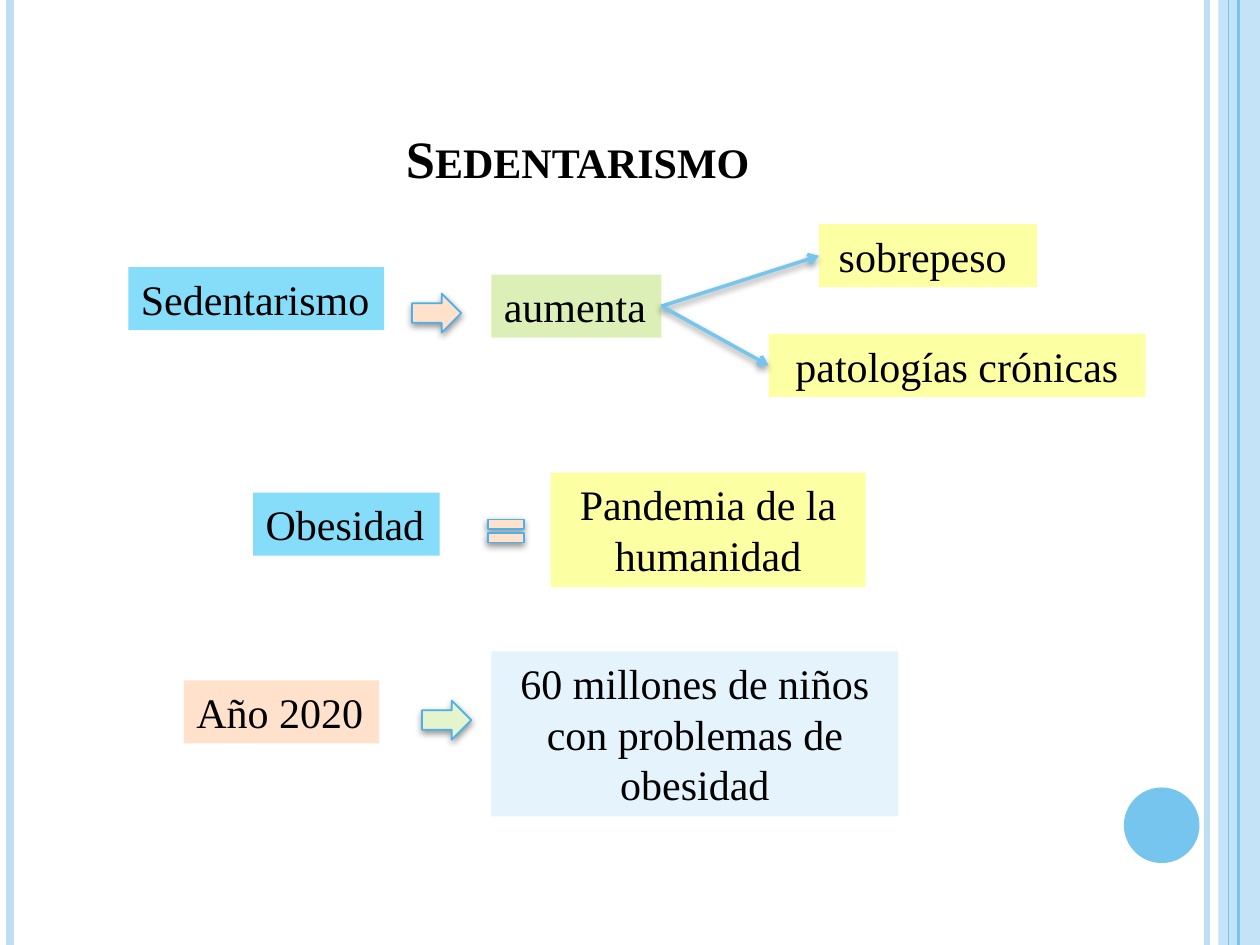
"""Build the Sedentarismo slide: three cause-and-effect rows in a blue frame."""
from lxml import etree
from pptx import Presentation
from pptx.dml.color import RGBColor
from pptx.enum.shapes import MSO_CONNECTOR, MSO_SHAPE as Shape
from pptx.enum.text import MSO_ANCHOR, MSO_AUTO_SIZE, PP_ALIGN as Align
from pptx.oxml.ns import qn
from pptx.util import Inches, Pt

THEME = {
    "font": "Times New Roman", "title_size": 30, "body_size": 24,
    "text": "000000", "pale": "BDDFF6", "blue": "76C5EF", "outline": "4BB1E7",
    "cyan": "86DDF9", "yellow": "FDFFA3", "green": "DBEFB6",
    "mint": "E4F4CD", "peach": "FFE1CC", "ice": "E4F3FC",
}
color = {name: RGBColor.from_string(value) for name, value in THEME.items()
         if name not in ("font", "title_size", "body_size")}


def set_effects(shape, alpha=None, distance=0):
    effects = etree.SubElement(shape._element.spPr, qn("a:effectLst"))
    if alpha:
        shadow = etree.SubElement(effects, qn("a:outerShdw"), blurRad=str(Pt(4)),
                                  dist=str(Pt(distance)), dir="5400000", rotWithShape="0")
        black = etree.SubElement(shadow, qn("a:srgbClr"), val=THEME["text"])
        etree.SubElement(black, qn("a:alpha"), val=str(alpha * 1000))


def add_line(start, end, line_color, width):
    line = slide.shapes.add_connector(MSO_CONNECTOR.STRAIGHT, *map(Inches, start + end))
    line.line.color.rgb = color[line_color]
    line.line.width = Pt(width)
    return line


presentation = Presentation()
presentation.slide_width, presentation.slide_height = Inches(10), Inches(7.5)
slide = presentation.slides.add_slide(presentation.slide_layouts[5])

for kind, bounds, fill, opacity in (
    (Shape.RECTANGLE, (9.67, 0, 0.33, 7.5), "pale", 87),
    (Shape.OVAL, (8.92, 6.25, 0.6, 0.6), "blue", 100),
):
    shape = slide.shapes.add_shape(kind, *map(Inches, bounds))
    shape.fill.solid()
    shape.fill.fore_color.rgb = color[fill]
    shape.line.fill.background()
    shape.shadow.inherit = False
    fill_color = shape._element.spPr.find(".//" + qn("a:srgbClr"))
    etree.SubElement(fill_color, qn("a:alpha"), val=str(opacity * 1000))

for x, line_color, width in (
    (9.58, "pale", 3), (0.08, "pale", 4.5), (9.83, "blue", 1.5), (9.75, "blue", 0.75),
):
    set_effects(add_line((x, 0), (x, 7.5), line_color, width))

title = slide.shapes.title
title.left, title.top, title.width, title.height = map(Inches, (0.5, 0.3, 8.17, 1.25))
title.text_frame.text = "Sedentarismo"
title.text_frame.auto_size = MSO_AUTO_SIZE.NONE
title.text_frame.vertical_anchor = MSO_ANCHOR.BOTTOM
paragraph = title.text_frame.paragraphs[0]
paragraph.alignment = Align.CENTER
run = paragraph.runs[0]
run._r.get_or_add_rPr().set("cap", "small")
title_format = {"name": THEME["font"], "size": Pt(THEME["title_size"]), "bold": True}
for name, value in title_format.items():
    setattr(run.font, name, value)
run.font.color.rgb = color["text"]

boxes = (
    ("Sedentarismo", (1.02, 2.12, 2.03, 0.5), "cyan", Align.LEFT, 0),
    ("sobrepeso ", (6.5, 1.78, 1.73, 0.5), "yellow", Align.CENTER, 0),
    ("aumenta", (3.9, 2.18, 1.35, 0.5), "green", Align.LEFT, 0),
    ("patologías crónicas", (6.1, 2.65, 2.99, 0.5), "yellow", Align.CENTER, 0),
    ("Obesidad", (2.01, 3.91, 1.48, 0.5), "cyan", Align.LEFT, 0),
    ("Pandemia de la humanidad", (4.37, 3.75, 2.5, 0.91), "yellow", Align.CENTER, 6),
    ("60 millones de niños con problemas de obesidad",
     (3.9, 5.17, 3.23, 1.31), "ice", Align.CENTER, 6),
    ("Año 2020", (1.46, 5.4, 1.55, 0.5), "peach", Align.LEFT, 0),
)
body_format = {"name": THEME["font"], "size": Pt(THEME["body_size"])}
for text, bounds, fill, alignment, space_before in boxes:
    box = slide.shapes.add_textbox(*map(Inches, bounds))
    box.fill.solid()
    box.fill.fore_color.rgb = color[fill]
    box.text_frame.word_wrap = alignment == Align.CENTER
    box.text_frame.auto_size = MSO_AUTO_SIZE.SHAPE_TO_FIT_TEXT
    paragraph = box.text_frame.paragraphs[0]
    paragraph.alignment = alignment
    paragraph.space_before = Pt(space_before)
    run = paragraph.add_run()
    run.text = text
    for name, value in body_format.items():
        setattr(run.font, name, value)
    run.font.color.rgb = color["text"]

for kind, left, top, fill in (
    (Shape.RIGHT_ARROW, 3.27, 2.33, "peach"),
    (Shape.MATH_EQUAL, 3.82, 4.06, "peach"),
    (Shape.RIGHT_ARROW, 3.35, 5.56, "mint"),
):
    symbol = slide.shapes.add_shape(kind, *map(Inches, (left, top, 0.39, 0.31)))
    symbol.fill.solid()
    symbol.fill.fore_color.rgb = color[fill]
    symbol.line.color.rgb = color["outline"]
    symbol.line.width = Pt(1)
    set_effects(symbol, alpha=42, distance=1.6)

for target in ((6.5, 2.03), (6.1, 2.9)):
    arrow = add_line((5.25, 2.43), target, "blue", 2)
    etree.SubElement(arrow.line._get_or_add_ln(), qn("a:tailEnd"), type="arrow")
    set_effects(arrow, alpha=40, distance=2)

presentation.save("out.pptx")
